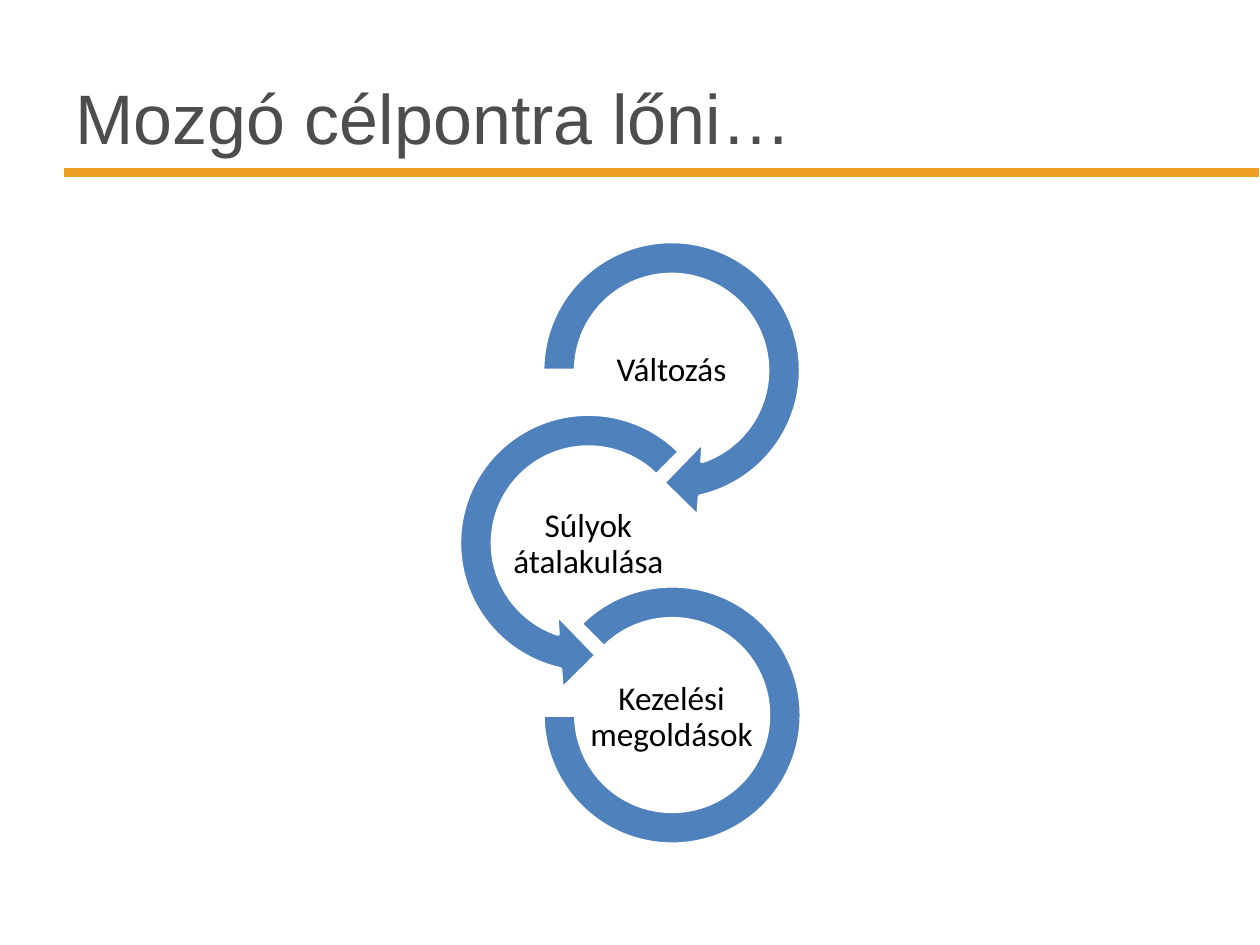
from pptx import Presentation
from pptx.dml.color import RGBColor
from pptx.enum import shapes, text
from pptx.util import Inches, Pt

SHAPE = shapes.MSO_SHAPE


def rgb(value):
    return RGBColor.from_string(value)


def add_filled(kind, box, fill, line_width):
    sp = s.shapes.add_shape(kind, *map(Inches, box))
    sp.shadow.inherit = False
    sp.fill.solid()
    sp.fill.fore_color.rgb = rgb(fill)
    sp.line.color.rgb = rgb("FFFFFF")
    sp.line.width = Pt(line_width)
    return sp


prs = Presentation()
prs.slide_width, prs.slide_height = Inches(10), Inches(7.5)
s = prs.slides.add_slide(prs.slide_layouts[5])

# Rule under the title
add_filled(SHAPE.RECTANGLE, (0.5, 1.33, 9.5, 0.08), "EDA021", 0.75)

# Title
title = s.shapes.title
title.left, title.top = Inches(0.5), Inches(0.3)
title.width, title.height = Inches(9), Inches(1.25)
tf = title.text_frame
tf.text = "Mozgó célpontra lőni…"
tf.vertical_anchor = text.MSO_ANCHOR.MIDDLE
p = tf.paragraphs[0]
p.alignment = text.PP_ALIGN.LEFT
p.font.name, p.font.size = "Arial", Pt(40)
p.font.color.rgb = rgb("4D4D4D")

# Chain of circular arrows: shape, left, top, size, adjustments, label, label position
steps = [
    (SHAPE.CIRCULAR_ARROW, 4.14, 1.75, 2.38,
     (0.11, 11.42, 45, 108, 0.125), "Változás", 4.67, 2.61),
    (SHAPE.LEFT_CIRCULAR_ARROW, 3.48, 3.12, 2.38,
     (0.11, 11.42, 63, 189, 0.125), "Súlyok átalakulása", 4.01, 3.99),
    (SHAPE.BLOCK_ARC, 4.31, 4.65, 2.05,
     (135, 108, 0.127), "Kezelési megoldások", 4.67, 5.37),
]
for kind, left, top, size, adjustments, label, label_left, label_top in steps:
    sp = add_filled(kind, (left, top, size, size), "4F81BD", 2)
    for i, value in enumerate(adjustments):
        sp.adjustments[i] = value

    # Label inside the ring
    tb = s.shapes.add_textbox(Inches(label_left), Inches(label_top),
                              Inches(1.32), Inches(0.66))
    tf = tb.text_frame
    tf.word_wrap = True
    tf.vertical_anchor = text.MSO_ANCHOR.MIDDLE
    tf.margin_left = tf.margin_right = Inches(0.01)
    tf.margin_top = tf.margin_bottom = Inches(0.01)
    tf.text = label
    p = tf.paragraphs[0]
    p.alignment = text.PP_ALIGN.CENTER
    p.line_spacing = 0.9
    p.font.name, p.font.size = "Calibri", Pt(19)
    p.font.color.rgb = rgb("000000")

prs.save("out.pptx")
